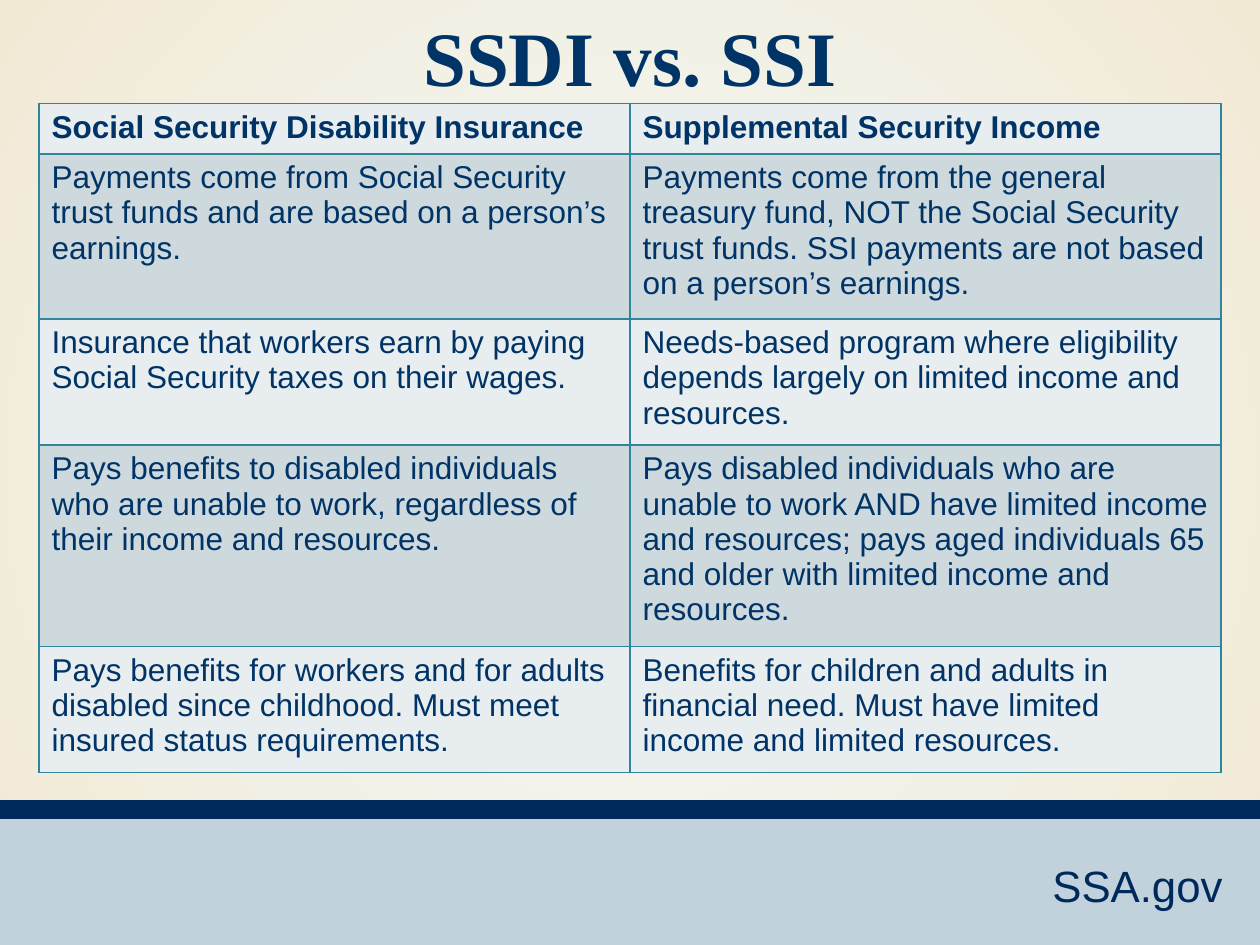
from lxml.etree import SubElement
from pptx import Presentation
from pptx.dml.color import RGBColor
from pptx.enum.shapes import MSO_SHAPE
from pptx.enum.text import MSO_ANCHOR, PP_ALIGN
from pptx.oxml.ns import qn
from pptx.util import Inches, Pt

NAVY = RGBColor(0x00, 0x29, 0x5B)
INK = RGBColor(0x00, 0x33, 0x66)
MIST = RGBColor(0xC1, 0xD2, 0xDC)
TEAL = RGBColor(0x31, 0x85, 0x9B)
ROW_LIGHT = RGBColor(0xE8, 0xED, 0xEF)
ROW_DARK = RGBColor(0xCE, 0xD9, 0xDE)
GLOW = RGBColor(0xF3, 0xFA, 0xFB)
SAND = RGBColor(0xF2, 0xE9, 0xD5)

WIDTH, HEIGHT = 10, 7.5
ROW_HEIGHTS = [0.4, 1.31, 0.94, 1.5, 0.94]
COMPARISON = [
    ("Social Security Disability Insurance", "Supplemental Security Income"),
    ("Payments come from Social Security trust funds and are based on a person’s earnings.",
     "Payments come from the general treasury fund, NOT the Social Security trust funds. "
     "SSI payments are not based on a person’s earnings."),
    ("Insurance that workers earn by paying Social Security taxes on their wages.",
     "Needs-based program where eligibility depends largely on limited income and resources."),
    ("Pays benefits to disabled individuals who are unable to work, regardless of their "
     "income and resources.",
     "Pays disabled individuals who are unable to work AND have limited income and resources; "
     "pays aged individuals 65 and older with limited income and resources."),
    ("Pays benefits for workers and for adults disabled since childhood. Must meet insured "
     "status requirements.",
     "Benefits for children and adults in financial need. Must have limited income and "
     "limited resources."),
]


class SlideBuilder:
    body_font = "Arial"
    title_font = "Times New Roman"

    def __init__(self, slide):
        self.slide = slide

    def area(self, left, top, width, height):
        return (Inches(left * WIDTH), Inches(top * HEIGHT),
                Inches(width * WIDTH), Inches(height * HEIGHT))

    def style(self, paragraph, size, color, font, bold=False):
        for run in paragraph.runs:
            run.font.size = Pt(size)
            run.font.name = font
            run.font.bold = bold
            run.font.color.rgb = color

    def radial_background(self, center, edge):
        fill = self.slide.background.fill
        fill.gradient()
        for stop, color in zip(fill.gradient_stops, (center, edge)):
            stop.color.rgb = color
        gradient = self.slide.element.find(".//" + qn("a:gradFill"))
        gradient.remove(gradient.find(qn("a:lin")))
        circle = SubElement(gradient, qn("a:path"), path="circle")
        SubElement(circle, qn("a:fillToRect"), l="50000", t="50000", r="50000", b="50000")

    def band(self, top, height, color):
        band = self.slide.shapes.add_shape(MSO_SHAPE.RECTANGLE, *self.area(0, top, 1, height))
        band.shadow.inherit = False
        band.fill.solid()
        band.fill.fore_color.rgb = color
        band.line.fill.background()

    def text(self, words, place, size, color, font, align, anchor, bold=False):
        frame = self.slide.shapes.add_textbox(*self.area(*place)).text_frame
        frame.word_wrap = True
        frame.vertical_anchor = anchor
        frame.margin_bottom = Inches(0.02)
        frame.text = words
        frame.paragraphs[0].alignment = align
        self.style(frame.paragraphs[0], size, color, font, bold)

    def cell_border(self, cell):
        properties = cell._tc.get_or_add_tcPr()
        for index, side in enumerate(("lnL", "lnR", "lnT", "lnB")):
            line = SubElement(properties, qn("a:" + side), w=str(Pt(1)))
            fill = SubElement(line, qn("a:solidFill"))
            SubElement(fill, qn("a:srgbClr"), val=str(TEAL))
            properties.insert(index, line)

    def table(self, rows, heights, left, top, width):
        place = self.area(left, top, width, sum(heights) / HEIGHT)
        table = self.slide.shapes.add_table(len(rows), len(rows[0]), *place).table
        for row, height in zip(table.rows, heights):
            row.height = Inches(height)
        for r, row in enumerate(rows):
            for c, words in enumerate(row):
                cell = table.cell(r, c)
                cell.text_frame.text = words
                self.style(cell.text_frame.paragraphs[0], 18, INK, self.body_font, r == 0)
                cell.fill.solid()
                cell.fill.fore_color.rgb = ROW_DARK if r % 2 else ROW_LIGHT
                self.cell_border(cell)


def main():
    deck = Presentation()
    deck.slide_width, deck.slide_height = Inches(WIDTH), Inches(HEIGHT)
    builder = SlideBuilder(deck.slides.add_slide(deck.slide_layouts[6]))
    builder.radial_background(GLOW, SAND)
    builder.band(0.86, 0.14, MIST)
    builder.band(6.35 / HEIGHT, 0.02, NAVY)
    builder.text("SSA.gov", (0.67, 0.9, 0.31, 0.07), 25, NAVY, builder.body_font,
                 PP_ALIGN.RIGHT, MSO_ANCHOR.MIDDLE)
    builder.text("SSDI vs. SSI", (0, 0, 1, 0.11), 44, INK, builder.title_font,
                 PP_ALIGN.CENTER, MSO_ANCHOR.BOTTOM, bold=True)
    margin = 0.31 / WIDTH
    builder.table(COMPARISON, ROW_HEIGHTS, margin, 0.82 / HEIGHT, 1 - 2 * margin)
    deck.save("out.pptx")


if __name__ == "__main__":
    main()
